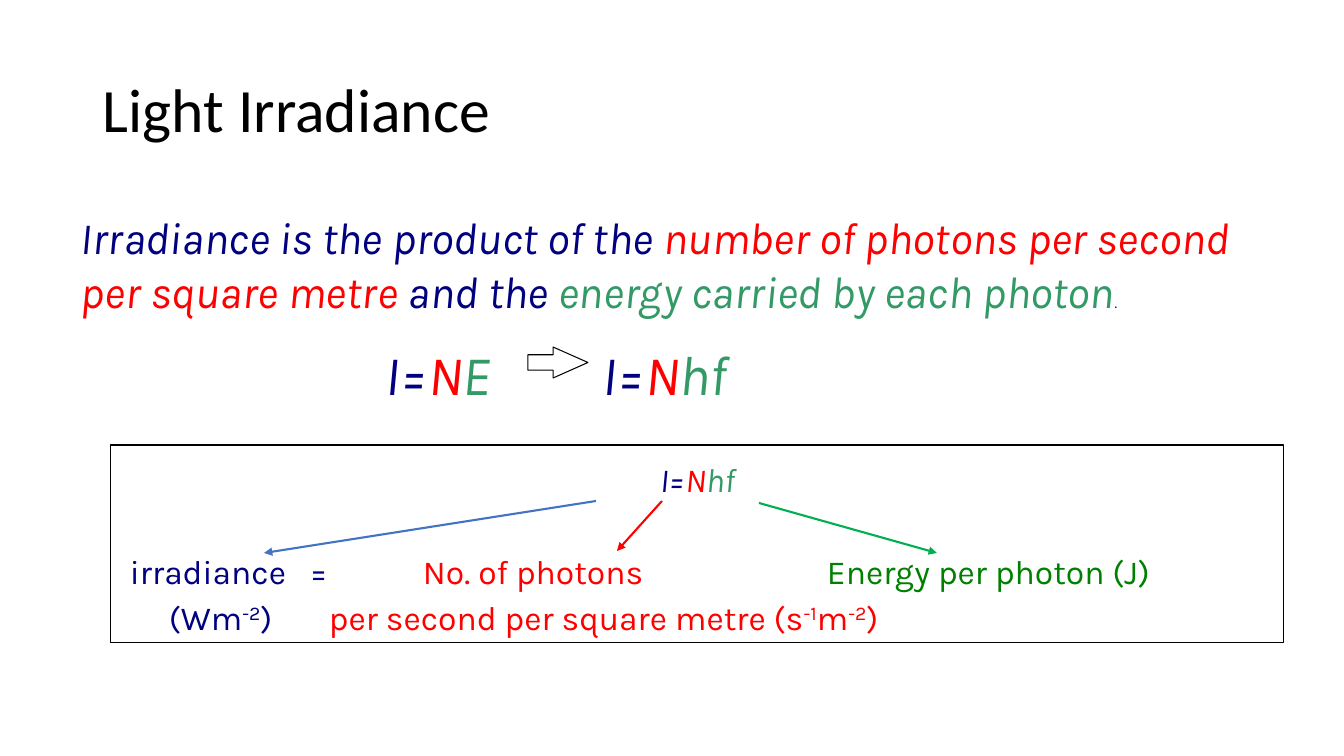
from lxml import etree
from pptx import Presentation
from pptx.dml.color import RGBColor
from pptx.enum.shapes import MSO_CONNECTOR, MSO_SHAPE
from pptx.enum.text import MSO_ANCHOR as Anchor, MSO_AUTO_SIZE, PP_ALIGN as Align
from pptx.oxml.ns import qn
from pptx.util import Pt

PX = 914400 / 100.8
COLORS = {
    "black": "000000", "white": "FFFFFF", "navy": "000080", "red": "FF0000",
    "sea": "339966", "green": "008000", "blue_arrow": "4472C4", "green_arrow": "00B050",
}


def px(*lengths):
    return [round(length * PX) for length in lengths]


def write_text(shape, runs, size=24, font="Karla", italic=False, align=Align.LEFT,
               anchor=Anchor.TOP, wrap=True, insets=(0, 0), spacing=None):
    """Fill a shape with one paragraph of (text, color[, baseline[, size]]) runs."""
    frame = shape.text_frame
    frame.word_wrap = wrap
    frame.auto_size = MSO_AUTO_SIZE.NONE
    frame.vertical_anchor = anchor
    side, top = px(*insets)
    frame.margin_left = frame.margin_right = side
    frame.margin_top, frame.margin_bottom = top, 0
    paragraph = frame.paragraphs[0]
    paragraph.alignment = align
    paragraph.line_spacing = spacing
    for text, color, *extra in runs:
        run = paragraph.add_run()
        run.text = text
        run.font.name = font
        run.font.size = Pt(extra[1] if len(extra) > 1 else size)
        run.font.italic = italic
        run.font.color.rgb = RGBColor.from_string(COLORS[color])
        if extra and extra[0]:
            run.font._element.set("baseline", str(extra[0] * 1000))


presentation = Presentation()
presentation.slide_width, presentation.slide_height = px(1344, 756)
slide = presentation.slides.add_slide(presentation.slide_layouts[5])
shapes = slide.shapes

# Title
title = shapes.title
title.left, title.top, title.width, title.height = px(93, 40, 1159, 146)
write_text(title, [("Light Irradiance", "black")], size=44, font="Calibri",
           anchor=Anchor.MIDDLE, insets=(10, 0), spacing=0.9)

# Definition
definition = shapes.add_textbox(*px(71, 157, 1234, 180))
write_text(definition, [
    ("Irradiance is the product of the ", "navy"),
    ("number of photons per second per square metre", "red"),
    (" and the ", "navy"),
    ("energy carried by each photon", "sea"),
    (".", "navy", 0, 11),
], size=32, italic=True, insets=(10, 53))

# Equations, before and after the block arrow
for left, energy in ((386, "E"), (603, "hf")):
    equation = shapes.add_textbox(*px(left, 340, 140, 66))
    write_text(equation, [("I=", "navy"), ("N", "red"), (energy, "sea")],
               size=40, italic=True, wrap=False)

# Block arrow and framed box
block_arrow = shapes.add_shape(MSO_SHAPE.RIGHT_ARROW, *px(528, 347, 60, 31))
block_arrow.adjustments[1] = 1.125
frame_box = shapes.add_shape(MSO_SHAPE.RECTANGLE, *px(111, 445, 1173, 198))
for shape in (block_arrow, frame_box):
    shape.shadow.inherit = False
    shape.fill.solid()
    shape.fill.fore_color.rgb = RGBColor.from_string(COLORS["white"])
    shape.line.color.rgb = RGBColor.from_string(COLORS["black"])
    shape.line.width = Pt(0.75)
write_text(frame_box, [("I=", "navy"), ("N", "red"), ("hf", "sea")],
           italic=True, align=Align.CENTER, insets=(10, 14))

# Labels in two rows: left, row, width, runs
ROW_TOP, ROW_STEP = 551, 46
labels = [
    (130, 0, 160, [("irradiance", "navy")]),
    (310, 0, 20, [("=", "navy")]),
    (423, 0, 225, [("No. of photons", "red")]),
    (827, 0, 330, [("Energy per photon (J)", "green")]),
    (169, 1, 110, [("(Wm", "navy"), ("-2", "navy", 30), (")", "navy")]),
    (329, 1, 560, [("per second per square metre (s", "red"), ("-1", "red", 30),
                   ("m", "red"), ("-2", "red", 30), (")", "red")]),
]
for left, row, width, runs in labels:
    label = shapes.add_textbox(*px(left, ROW_TOP + row * ROW_STEP, width, 40))
    write_text(label, runs, wrap=False)

# Arrows from the formula to its labels
arrows = [
    ("blue_arrow", 596, 501, 264, 553),
    ("green_arrow", 759, 503, 937, 553),
    ("red", 662, 501, 617, 551),
]
for color, *ends in arrows:
    arrow = shapes.add_connector(MSO_CONNECTOR.STRAIGHT, *px(*ends))
    arrow.line.color.rgb = RGBColor.from_string(COLORS[color])
    arrow.line.width = Pt(1.5)
    etree.SubElement(arrow.line._get_or_add_ln(), qn("a:tailEnd"), type="triangle")
    etree.SubElement(arrow._element.spPr, qn("a:effectLst"))

presentation.save("out.pptx")
